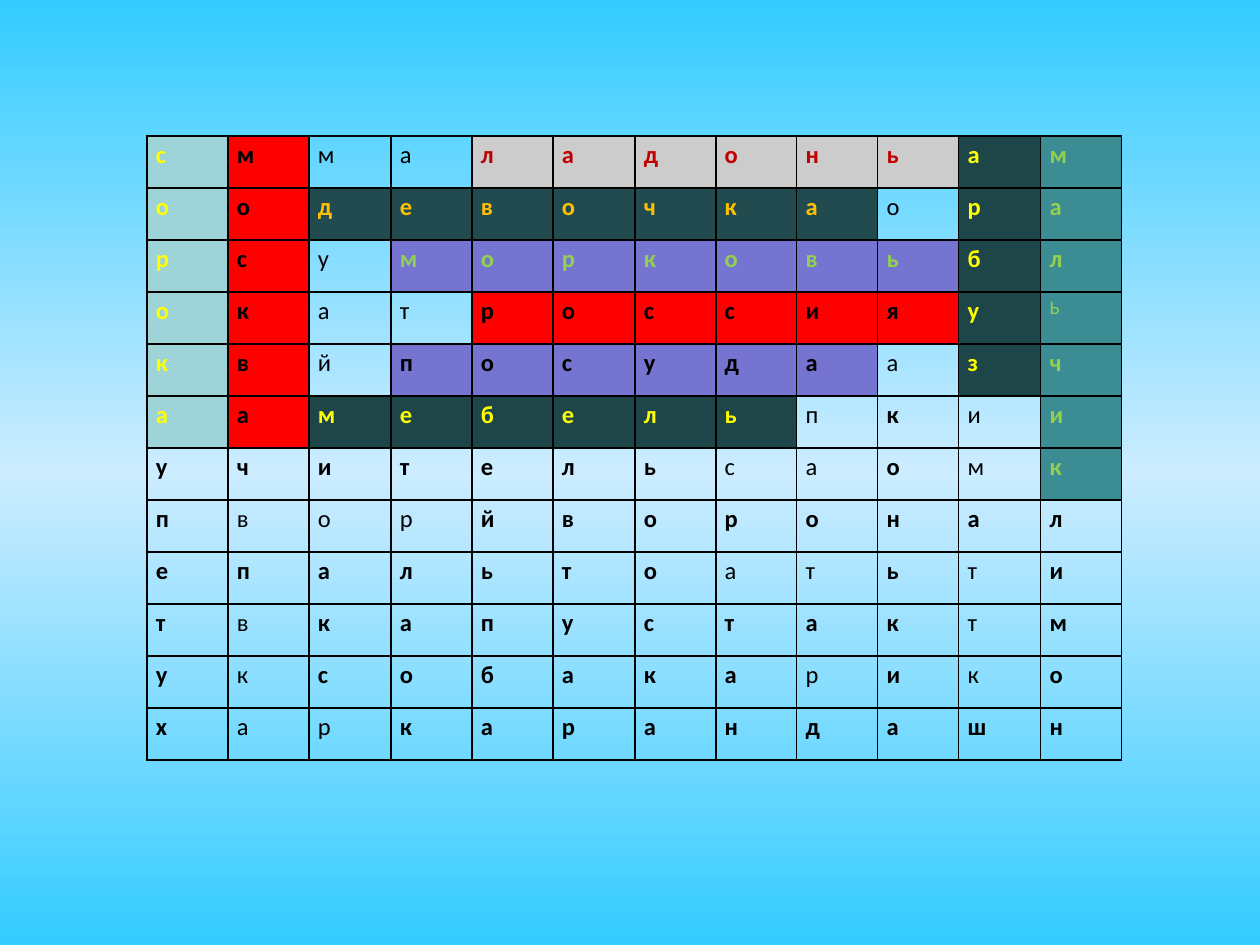
from copy import deepcopy
from pptx import Presentation, util as u
from pptx.dml.color import RGBColor
from pptx.oxml import parse_xml
from pptx.oxml.ns import nsdecls, qn

SCALE = 914400 / 126
COLORS = {
    "sky": "33CCFF", "haze": "CCECFF", "black": "000000", "yellow": "FFFF00",
    "orange": "FFC000", "crimson": "C00000", "green": "92D050", "red": "FF0000",
    "pale": "9ED3D7", "grey": "CCCCCC", "dark": "1E4649", "slate": "224B50",
    "teal": "3C8C93", "violet": "7575D1",
}
WORD_STYLES = {
    ".": (None, "black"), "b": (None, "black"), "s": ("pale", "yellow"),
    "r": ("red", "black"), "g": ("grey", "crimson"), "d": ("dark", "yellow"),
    "t": ("teal", "green"), "o": ("slate", "orange"), "v": ("violet", "green"),
    "p": ("violet", "black"),
}
LETTER_ROWS = [
    ("сммаладоньам", "sr..ggggggdt"),
    ("оодевочкаора", "srooooooo.dt"),
    ("рсуморковьбл", "sr.vvvvvvvdt"),
    ("окатроссияуЬ", "sr..rrrrrrdt"),
    ("квйпосудаазч", "sr.pppppp.dt"),
    ("аамебельпкии", "srdddddd.b.t"),
    ("учительсаомк", "bbbbbbb..b.t"),
    ("пворйворонал", "b...bbbbbbbb"),
    ("епальтоатьти", "bbbbbbb..b.b"),
    ("твкапустактм", "b.bbbbbbbb.b"),
    ("уксобакарико", "b.bbbbbb.b.b"),
    ("харкарандашн", "b..bbbbbbbbb"),
]
COUNT = len(LETTER_ROWS)
LEFT, TOP, WIDTH, ROW_HEIGHT = 147, 136, 975, 52


def px(length):
    return u.Emu(round(length * SCALE))


def color(name):
    return RGBColor.from_string(COLORS[name])


deck = Presentation()
deck.slide_width, deck.slide_height = px(1260), px(945)
slide = deck.slides.add_slide(deck.slide_layouts[6])

sky = slide.background.fill
sky.gradient()
sky.gradient_angle = 270
stops = slide.element.find(".//" + qn("a:gsLst"))
stops.insert(1, deepcopy(stops[0]))
for stop, (position, name) in zip(
        sky.gradient_stops, [(0, "sky"), (0.5, "haze"), (1, "sky")]):
    stop.position = position
    stop.color.rgb = color(name)

puzzle = slide.shapes.add_table(
    COUNT, COUNT, px(LEFT), px(TOP), px(WIDTH), px(ROW_HEIGHT * COUNT)).table
puzzle.first_row = puzzle.horz_banding = False
edges = [round(i * WIDTH / COUNT) for i in range(COUNT + 1)]
for column, start, end in zip(puzzle.columns, edges, edges[1:]):
    column.width = px(end - start)

for r, (letters, styles) in enumerate(LETTER_ROWS):
    puzzle.rows[r].height = px(ROW_HEIGHT)
    for c, (letter, style) in enumerate(zip(letters, styles)):
        cell = puzzle.cell(r, c)
        cell.margin_left = cell.margin_right = px(9)
        cell.margin_top = cell.margin_bottom = 0
        properties = cell._tc.get_or_add_tcPr()
        for side in "LRTB":
            properties.append(parse_xml(
                f'<a:ln{side} {nsdecls("a")} w="12700"><a:solidFill>'
                f'<a:srgbClr val="{COLORS["black"]}"/></a:solidFill></a:ln{side}>'))

        backdrop, ink = WORD_STYLES[style]
        if backdrop:
            cell.fill.solid()
            cell.fill.fore_color.rgb = color(backdrop)
        else:
            cell.fill.background()

        line = cell.text_frame.paragraphs[0]
        line.line_spacing = 1.15
        run = line.add_run()
        run.text = letter
        run.font.name = "Calibri"
        run.font.size = u.Pt(11 if letter.isupper() else 14)
        run.font.bold = style != "." and letter.islower()
        run.font.color.rgb = color(ink)

deck.save("out.pptx")
